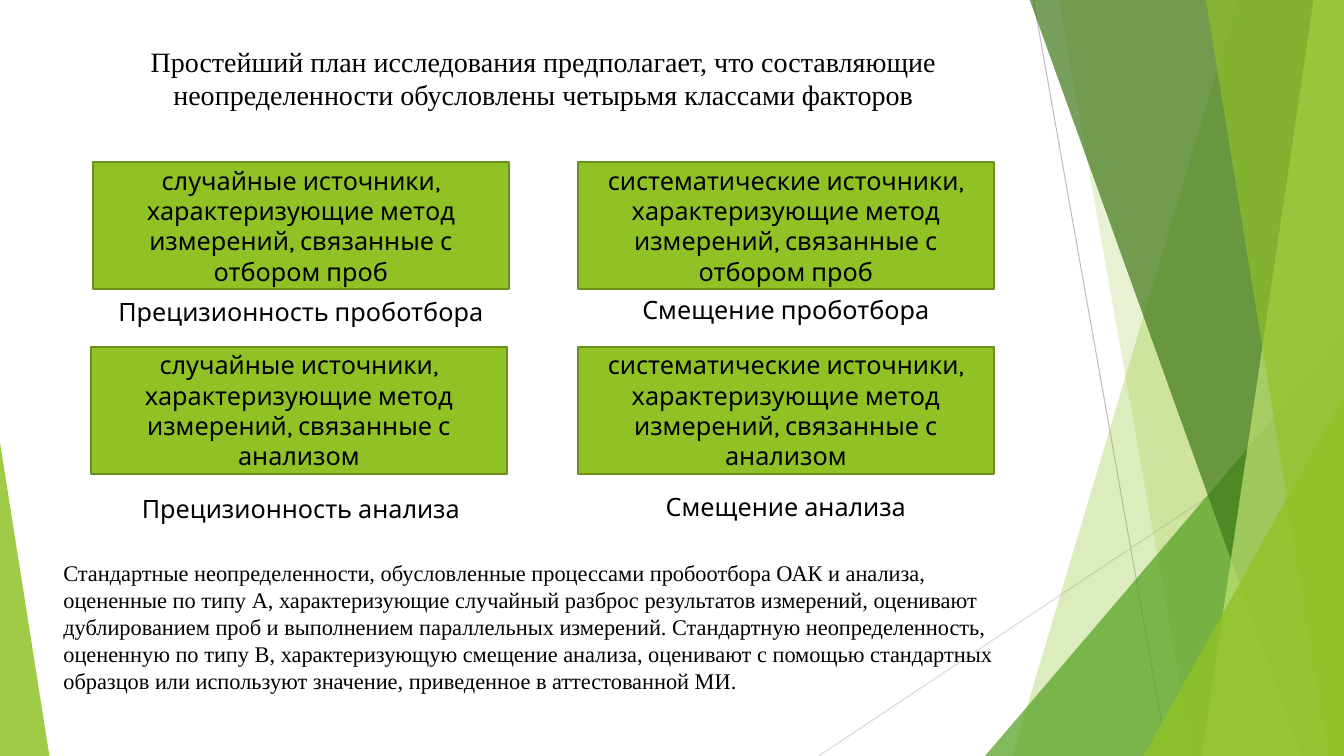
from lxml import etree
from pptx import Presentation, util as u
from pptx.dml.color import RGBColor
from pptx.enum import shapes, text
from pptx.oxml.ns import qn

COLORS = {"text": "000000", "lime": "90C226", "edge": "6B901C", "green": "54A021",
          "dark": "3F7819", "pale": "C0E474", "gray": "BFBFBF", "silver": "D9D9D9"}
KARLA = {"name": "Karla", "size": u.Pt(18)}
TITLE = {"name": "Times New Roman", "size": u.Pt(20), "bold": False}
BODY = {"name": "Times New Roman", "size": u.Pt(16)}
FRAME = {"word_wrap": True, "margin_left": u.Inches(0.1), "margin_right": u.Inches(0.1),
         "margin_top": u.Inches(0.05), "margin_bottom": u.Inches(0.05)}
CENTER, LEFT = text.PP_ALIGN.CENTER, text.PP_ALIGN.LEFT
TOP, MIDDLE = text.MSO_ANCHOR.TOP, text.MSO_ANCHOR.MIDDLE
RIGHT_EDGE, UPPER, LOWER = 13.33, -0.01, 7.5


def rgb(name):
    return RGBColor.from_string(COLORS[name])


def inches(*values):
    return [u.Inches(v) for v in values]


class SlideBuilder:
    def __init__(self, slide):
        self.s = slide

    def set_text(self, sp, words, font, align=CENTER, anchor=TOP):
        tf = sp.text_frame
        for key, value in {**FRAME, "vertical_anchor": anchor}.items():
            setattr(tf, key, value)
        p = tf.paragraphs[0]
        p.alignment = align
        r = p.add_run()
        r.text = words
        for key, value in font.items():
            setattr(r.font, key, value)
        r.font.color.rgb = rgb("text")

    def title(self, box, words):
        sp = self.s.shapes.title
        sp.left, sp.top, sp.width, sp.height = inches(*box)
        self.set_text(sp, words, TITLE)

    def label(self, box, words, font=KARLA, align=CENTER):
        self.set_text(self.s.shapes.add_textbox(*inches(*box)), words, font, align)

    def paint(self, sp, color, opacity=100):
        sp.shadow.inherit = False
        sp.fill.solid()
        sp.fill.fore_color.rgb = rgb(color)
        sp.line.fill.background()
        if opacity < 100:
            clr = sp._element.spPr.find(qn("a:solidFill"))[0]
            etree.SubElement(clr, qn("a:alpha"), val=str(opacity * 1000))

    def card(self, box, words):
        sp = self.s.shapes.add_shape(shapes.MSO_SHAPE.RECTANGLE, *inches(*box))
        self.paint(sp, "lime")
        sp.line.color.rgb = rgb("edge")
        sp.line.width = u.Pt(1.5)
        self.set_text(sp, words, KARLA, anchor=MIDDLE)

    def line(self, start, end, color):
        c = self.s.shapes.add_connector(shapes.MSO_CONNECTOR.STRAIGHT, *inches(*start, *end))
        c.line.color.rgb = rgb(color)
        c.line.width = u.Pt(0.75)
        etree.SubElement(c._element.spPr, qn("a:effectLst"))

    def band(self, top_x, bottom_x, color, opacity):
        """Fill from a slanted left side to the right edge of the slide."""
        points = [(RIGHT_EDGE, UPPER), (RIGHT_EDGE, LOWER), (bottom_x, LOWER)]
        fb = self.s.shapes.build_freeform(*inches(top_x, UPPER), scale=1.0)
        fb.add_line_segments([inches(*pt) for pt in points], close=True)
        self.paint(fb.convert_to_shape(), color, opacity)

    def triangle(self, box, apex, color, opacity):
        sp = self.s.shapes.add_shape(shapes.MSO_SHAPE.ISOSCELES_TRIANGLE, *inches(*box))
        sp.adjustments[0] = apex
        self.paint(sp, color, opacity)


def decorate(b):
    b.line((10.25, 0), (11.58, 7.5), "gray")
    b.line((13.33, 4.03), (8.12, 7.5), "silver")
    b.band(12.28, 10.04, "lime", 30)
    b.band(10.5, 11.83, "lime", 20)
    b.triangle((9.77, 3.33, 3.56, 4.17), 1, "green", 72)
    b.band(10.21, 12.91, "dark", 70)
    b.band(13.03, 11.92, "pale", 70)
    b.band(11.96, 13.18, "lime", 65)
    b.triangle((11.34, 3.93, 1.99, 3.57), 1, "lime", 80)
    b.triangle((0, 4.39, 0.49, 3.11), 0, "lime", 85)


def main():
    prs = Presentation()
    prs.slide_width, prs.slide_height = inches(13.33, 7.5)
    b = SlideBuilder(prs.slides.add_slide(prs.slide_layouts[5]))
    decorate(b)
    b.title((0.69, 0.39, 9.4, 0.96),
            "Простейший план исследования предполагает, что составляющие "
            "неопределенности обусловлены четырьмя классами факторов")

    factors = [  # card left, card top, label left, label top, sources, stage, label
        (0.92, 1.61, 0.92, 2.89, "случайные", "отбором проб", "Прецизионность проботбора"),
        (0.9, 3.44, 0.92, 4.84, "случайные", "анализом", "Прецизионность анализа"),
        (5.73, 1.61, 5.73, 2.87, "систематические", "отбором проб", "Смещение проботбора"),
        (5.73, 3.44, 5.73, 4.83, "систематические", "анализом", "Смещение анализа"),
    ]
    for x, y, label_x, label_y, sources, stage, label in factors:
        b.card((x, y, 4.13, 1.26),
               f"{sources} источники, характеризующие метод измерений, связанные с {stage}")
        b.label((label_x, label_y, 4.13, 0.4), label)

    b.label((0.53, 5.5, 9.45, 1.45),
            "Стандартные неопределенности, обусловленные процессами пробоотбора ОАК и анализа, "
            "оцененные по типу А, характеризующие случайный разброс результатов измерений, "
            "оценивают дублированием проб и выполнением параллельных измерений. Стандартную "
            "неопределенность, оцененную по типу В, характеризующую смещение анализа, оценивают "
            "с помощью стандартных образцов или используют значение, приведенное в "
            "аттестованной МИ.", BODY, LEFT)
    prs.save("out.pptx")


if __name__ == "__main__":
    main()
